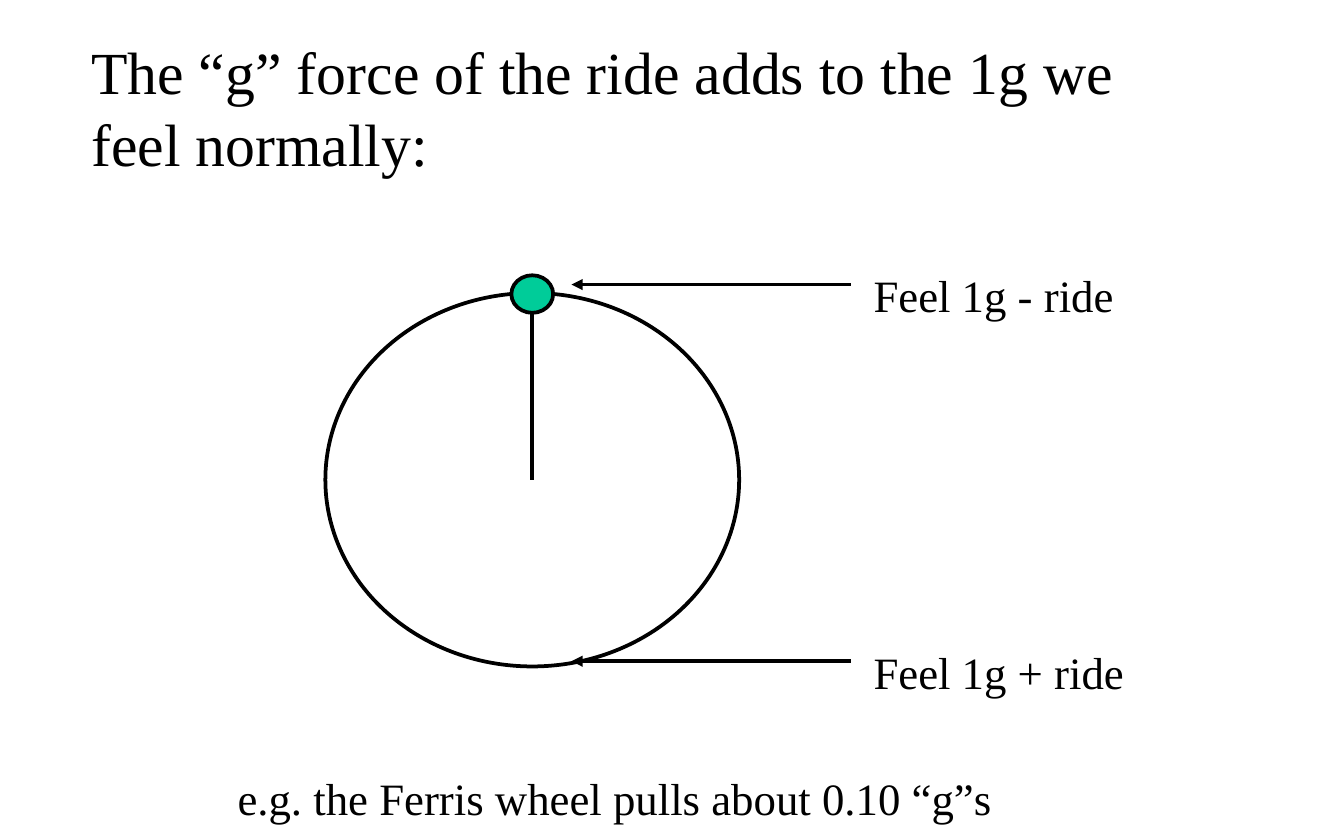
"""Build the slide on how a ride's g force adds to normal gravity."""
from dataclasses import dataclass
from typing import Optional

from lxml import etree
from pptx import Presentation
from pptx.dml.color import RGBColor
from pptx.enum.shapes import MSO_CONNECTOR, MSO_SHAPE
from pptx.enum.text import MSO_ANCHOR, MSO_AUTO_SIZE, PP_ALIGN
from pptx.oxml.ns import qn
from pptx.slide import Slide
from pptx.text.text import TextFrame
from pptx.util import Cm, Pt

BLACK = RGBColor(0x00, 0x00, 0x00)
GREEN = RGBColor(0x00, 0xCC, 0x99)
FONT = "Times New Roman"
OVAL = MSO_SHAPE.OVAL
STRAIGHT = MSO_CONNECTOR.STRAIGHT
TOP = MSO_ANCHOR.TOP
LEFT = PP_ALIGN.LEFT
NO_AUTOFIT = MSO_AUTO_SIZE.NONE
LINE_WIDTH = Pt(2)


@dataclass
class Circle:
    cx: float
    cy: float
    width: float
    height: float
    fill: Optional[RGBColor] = None


@dataclass
class Callout:
    text: str
    y: float
    width: float


WHEEL = Circle(10.06, 9.07, 7.82, 7.06)
WHEEL_TOP = WHEEL.cy - WHEEL.height / 2
CABIN = Circle(WHEEL.cx, WHEEL_TOP + 0.02, 0.79, 0.71, GREEN)
CALLOUTS = [
    Callout("Feel 1g - ride", 5.38, 5.08),
    Callout("Feel 1g + ride", 12.5, 5.28),
]


def write(tf: TextFrame, text: str, size: int, wrap: bool) -> None:
    tf.auto_size = NO_AUTOFIT
    tf.word_wrap = wrap
    tf.vertical_anchor = TOP
    p = tf.paragraphs[0]
    p.alignment = LEFT
    r = p.add_run()
    r.text = text
    r.font.name = FONT
    r.font.size = Pt(size)
    r.font.color.rgb = BLACK


def add_label(s: Slide, text: str, x: float, y: float, width: float) -> None:
    sp = s.shapes.add_textbox(Cm(x), Cm(y), Cm(width), Cm(1.27))
    write(sp.text_frame, text, 24, False)


def add_circle(s: Slide, c: Circle) -> None:
    sp = s.shapes.add_shape(OVAL, Cm(c.cx - c.width / 2), Cm(c.cy - c.height / 2),
                            Cm(c.width), Cm(c.height))
    sp.shadow.inherit = False
    if c.fill is None:
        sp.fill.background()
    else:
        sp.fill.solid()
        sp.fill.fore_color.rgb = c.fill
    sp.line.color.rgb = BLACK
    sp.line.width = LINE_WIDTH


def add_arrow(s: Slide, x1: float, y1: float, x2: float, y2: float) -> None:
    sp = s.shapes.add_connector(STRAIGHT, Cm(x1), Cm(y1), Cm(x2), Cm(y2))
    sp.line.color.rgb = BLACK
    sp.line.width = LINE_WIDTH
    etree.SubElement(sp.line._get_or_add_ln(), qn("a:tailEnd"), type="triangle")
    etree.SubElement(sp._element.spPr, qn("a:effectLst"))


def add_callout(s: Slide, c: Callout) -> None:
    add_arrow(s, 16.08, c.y, 10.8, c.y)
    add_label(s, c.text, 16.26, c.y - 0.44, c.width)


def main() -> None:
    prs = Presentation()
    prs.slide_width, prs.slide_height = Cm(25.4), Cm(15.88)
    s = prs.slides.add_slide(prs.slide_layouts[5])

    title = s.shapes.title
    title.left, title.top = Cm(1.47), Cm(0.53)
    title.width, title.height = Cm(21.8), Cm(3)
    write(title.text_frame, "The “g” force of the ride adds to the 1g we feel normally:", 32, True)

    add_circle(s, WHEEL)
    add_arrow(s, WHEEL.cx, WHEEL.cy, WHEEL.cx, WHEEL_TOP)
    add_circle(s, CABIN)
    for c in CALLOUTS:
        add_callout(s, c)
    add_label(s, "e.g. the Ferris wheel pulls about 0.10 “g”s", 4.24, 14.45, 14.88)

    prs.save("out.pptx")


if __name__ == "__main__":
    main()
